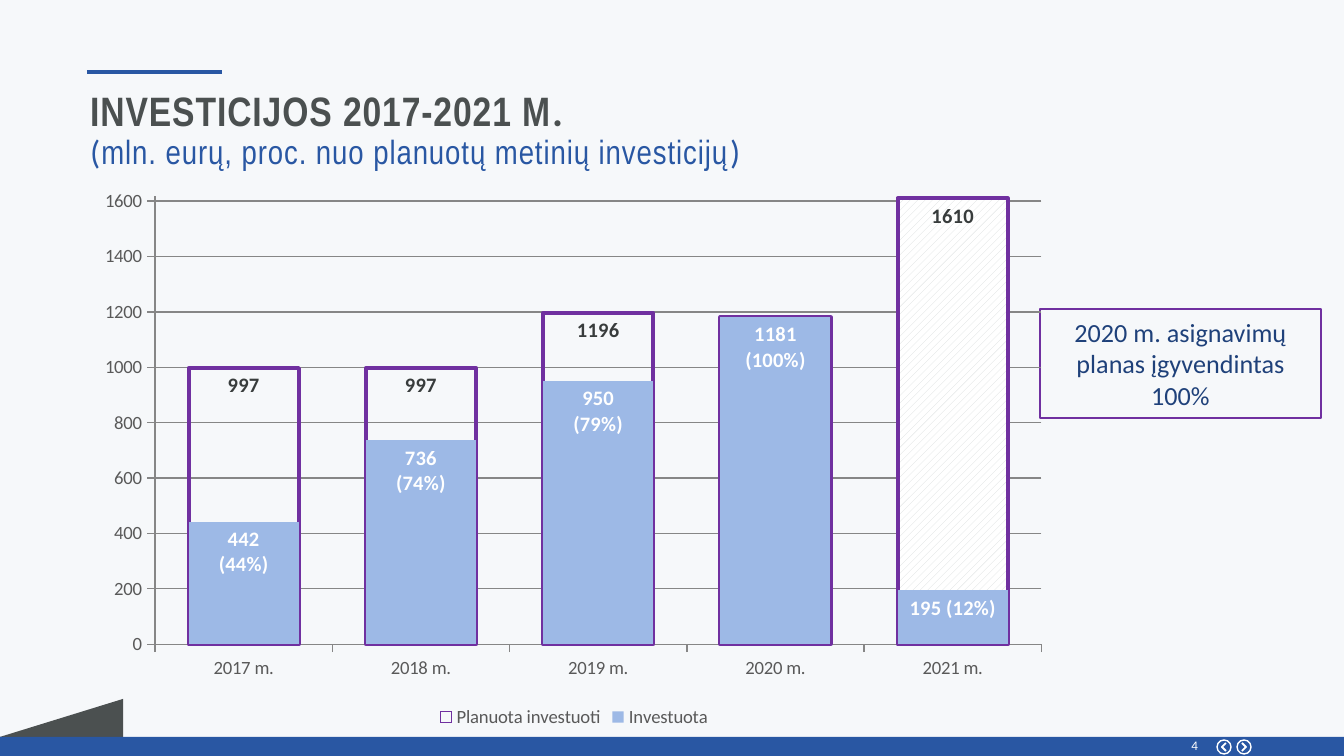
from pptx import Presentation
from pptx.chart.data import CategoryChartData
from pptx.dml.color import RGBColor
from pptx.enum.chart import XL_CHART_TYPE, XL_LABEL_POSITION, XL_LEGEND_POSITION, XL_TICK_MARK
from pptx.enum.dml import MSO_PATTERN
from pptx.enum.shapes import MSO_CONNECTOR, MSO_SHAPE
from pptx.enum.text import MSO_ANCHOR, PP_ALIGN
from pptx.oxml import parse_xml
from pptx.oxml.ns import nsdecls, qn
from pptx.util import Pt

PX = 9144000 / 1344
BLUE, PURPLE, GREY, WHITE = "2957A3", "7030A0", "4B5050", "FFFFFF"
LIGHT_BLUE, NAVY, AXIS_TEXT, GRID = "9DB9E6", "1F417A", "595959", "868686"
NARROW, SANS = "Arial Narrow", "Calibri"


def px(n):
    return round(n * PX)


def rgb(value):
    return RGBColor.from_string(value)


def set_font(font, size, color, name=SANS, bold=False):
    font.size, font.name, font.bold = Pt(size), name, bold
    font.color.rgb = rgb(color)


def set_line(line, color, width):
    line.color.rgb = rgb(color)
    line.width = Pt(width)


class Deck:
    def __init__(self, width, height, background):
        self.prs = Presentation()
        self.prs.slide_width, self.prs.slide_height = px(width), px(height)
        self.s = self.prs.slides.add_slide(self.prs.slide_layouts[6])
        self.s.background.fill.solid()
        self.s.background.fill.fore_color.rgb = rgb(background)

    def style(self, sp, fill, line, width):
        sp.shadow.inherit = False
        if fill:
            sp.fill.solid()
            sp.fill.fore_color.rgb = rgb(fill)
        else:
            sp.fill.background()
        if line:
            set_line(sp.line, line, width)
        else:
            sp.line.fill.background()
        return sp

    def shape(self, kind, box, fill=None, line=None, width=1):
        sp = self.s.shapes.add_shape(kind, *map(px, box))
        return self.style(sp, fill, line, width)

    def outline(self, points, fill=None, line=None, width=1, close=True):
        builder = self.s.shapes.build_freeform(*points[0], scale=PX)
        builder.add_line_segments(points[1:], close=close)
        return self.style(builder.convert_to_shape(), fill, line, width)

    def rule(self, x1, y1, x2, y2, color, width):
        c = self.s.shapes.add_connector(MSO_CONNECTOR.STRAIGHT, *map(px, (x1, y1, x2, y2)))
        set_line(c.line, color, width)
        c._element.spPr.append(parse_xml(f"<a:effectLst {nsdecls('a')}/>"))

    def text(self, box, inset=None):
        tf = self.s.shapes.add_textbox(*map(px, box)).text_frame
        tf.word_wrap = True
        if inset is not None:
            tf.margin_left = tf.margin_top = tf.margin_right = tf.margin_bottom = inset
        return tf

    def run(self, p, text, size, color, name=SANS, bold=False, spacing=50):
        r = p.add_run()
        r.text = text
        set_font(r.font, size, color, name, bold)
        r.font._element.set("spc", str(spacing))

    def chart(self, box, categories, series):
        data = CategoryChartData(number_format="0")
        data.categories = categories
        for name, values in series:
            data.add_series(name, values)
        frame = self.s.shapes.add_chart(XL_CHART_TYPE.COLUMN_CLUSTERED, *map(px, box), data)
        chart = frame.chart
        set_font(chart.font, 10, "000000")
        chart.has_title = False
        chart.has_legend = True
        chart.legend.position = XL_LEGEND_POSITION.BOTTOM
        chart.legend.include_in_layout = False
        set_font(chart.legend.font, 10, AXIS_TEXT)
        for axis in (chart.category_axis, chart.value_axis):
            axis.major_tick_mark = XL_TICK_MARK.OUTSIDE
            axis.minor_tick_mark = XL_TICK_MARK.NONE
            set_font(axis.tick_labels.font, 10, AXIS_TEXT)
            set_line(axis.format.line, GRID, 0.75)
        return chart

    def plot_area(self, chart, **edges):
        area = chart._chartSpace.chart.plotArea
        for old in area.findall(qn("c:layout")):
            area.remove(old)
        values = "".join(f'<c:{k} val="{v}"/>' for k, v in edges.items())
        area.insert(0, parse_xml(
            f'<c:layout {nsdecls("c")}><c:manualLayout><c:layoutTarget val="inner"/>'
            f'<c:xMode val="edge"/><c:yMode val="edge"/>{values}</c:manualLayout></c:layout>'))

    def labels(self, series, color):
        labels = series.data_labels
        labels.show_value = True
        labels.number_format, labels.number_format_is_linked = "0", False
        labels.position = XL_LABEL_POSITION.INSIDE_END
        set_font(labels.font, 11, color, bold=True)
        return labels


deck = Deck(1344, 756, "F6F8FA")

# Footer band, wedge and navigation arrows
deck.outline([(0, 737), (123, 699), (123, 737)], GREY)
deck.shape(MSO_SHAPE.RECTANGLE, (0, 737, 1344, 19), BLUE)
for center, tip in ((1224, -2), (1244, 2)):
    deck.shape(MSO_SHAPE.OVAL, (center - 7, 740, 14, 14), line=WHITE, width=0.75)
    deck.outline([(center - tip, 743), (center + tip, 747), (center - tip, 751)],
                 line=WHITE, close=False)
p = deck.text((1167, 738, 31, 16), inset=0).paragraphs[0]
p.alignment = PP_ALIGN.RIGHT
deck.run(p, "4", 7, WHITE, spacing=30)

# Title
tf = deck.text((77, 85, 1012, 94))
p = tf.paragraphs[0]
p.line_spacing = 0.9
deck.run(p, "INVESTICIJOS 2017-2021 M", 22, GREY, NARROW, True)
deck.run(p, ".", 22, GREY, SANS, True)
p = tf.add_paragraph()
p.line_spacing = 0.9
for text, name in (("(", SANS), ("mln. eurų, proc. nuo planuotų metinių investicijų", NARROW),
                   (")", SANS)):
    deck.run(p, text, 18, BLUE, name)
deck.rule(87, 72, 222, 72, BLUE, 2.25)

# Callout
tf = deck.shape(MSO_SHAPE.RECTANGLE, (1040, 309, 281, 109), line=PURPLE).text_frame
tf.word_wrap = True
tf.vertical_anchor = MSO_ANCHOR.MIDDLE
p = tf.paragraphs[0]
p.text = "2020 m. asignavimų planas įgyvendintas 100%"
p.alignment = PP_ALIGN.CENTER
set_font(p.font, 14, NAVY)

# Chart of planned and actual investment
chart = deck.chart((87, 179, 974, 554), [f"{year} m." for year in range(2017, 2022)],
                   [("Planuota investuoti", (997, 997, 1196, 1181, 1610)),
                    ("Investuota", (442, 736, 950, 1181, 194))])
deck.plot_area(chart, x=0.07, y=0.03, w=0.91, h=0.81)
axis = chart.value_axis
axis.minimum_scale, axis.maximum_scale, axis.major_unit = 0, 1620, 200
axis.tick_labels.number_format, axis.tick_labels.number_format_is_linked = "0", False
set_line(axis.major_gridlines.format.line, GRID, 0.75)
plot = chart.plots[0]
plot.gap_width, plot.overlap, plot.vary_by_categories = 61, 100, False
planned, invested = plot.series

# Planned: outlined columns, the last one hatched, 2020 without a label
planned.format.fill.background()
set_line(planned.format.line, PURPLE, 2.25)
last = planned.points[4].format
last.fill.patterned()
last.fill.pattern = MSO_PATTERN.WIDE_UPWARD_DIAGONAL
last.fill.fore_color.rgb, last.fill.back_color.rgb = rgb("DADDDD"), rgb(WHITE)
set_line(last.line, PURPLE, 2.25)
labels = deck.labels(planned, "383C3C")
labels._element.insert(0, parse_xml(
    f'<c:dLbl {nsdecls("c")}><c:idx val="3"/><c:delete val="1"/></c:dLbl>'))

# Invested: filled columns with value and share
invested.format.fill.solid()
invested.format.fill.fore_color.rgb = rgb(LIGHT_BLUE)
deck.labels(invested, WHITE)
shares = ("442\n(44%)", "736\n(74%)", "950\n(79%)", "1181\n(100%)", "195 (12%)")
for i, text in enumerate(shares):
    label = invested.points[i].data_label
    label.text_frame.text = text
    label.position = XL_LABEL_POSITION.INSIDE_END
    for p in label.text_frame.paragraphs:
        set_font(p.runs[0].font, 11, WHITE, bold=True)

deck.prs.save("out.pptx")
